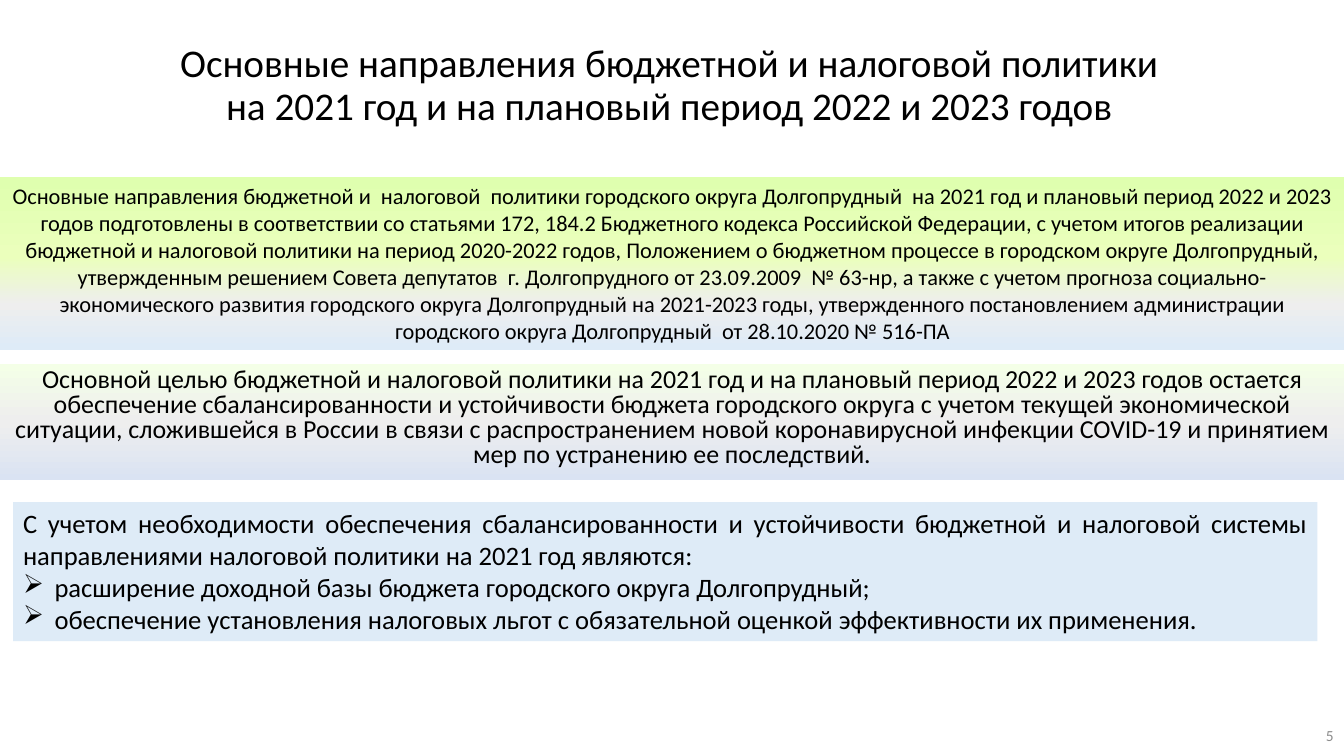
"""Build the slide on budget and tax policy directions for 2021-2023."""
from lxml.etree import SubElement
from pptx import Presentation
from pptx.dml.color import RGBColor
from pptx.enum.shapes import MSO_SHAPE
from pptx.enum.text import MSO_ANCHOR, MSO_AUTO_SIZE, PP_ALIGN
from pptx.oxml.ns import qn
from pptx.util import Pt


def paint(fill, *stops):
    """Fill with one hex colour, or top to bottom with (percent, hex) stops."""
    if len(stops) == 1:
        fill.solid()
        fill.fore_color.rgb = RGBColor.from_string(stops[0])
        return
    fill.gradient()
    fill.gradient_angle = 270
    stop_list = fill._fill._gradFill.find(qn("a:gsLst"))
    stop_list.clear()
    for percent, colour in stops:
        stop = SubElement(stop_list, qn("a:gs"), pos=str(percent * 1000))
        SubElement(stop, qn("a:srgbClr"), val=colour)


def write(part, box, text, size, colour="000000", frame={}, paragraph={}):
    """Place a part, write its text and apply the format values."""
    part.left, part.top, part.width, part.height = map(Pt, box)
    text_frame = part.text_frame
    text_frame.text = text
    for key, value in {"word_wrap": True, "auto_size": MSO_AUTO_SIZE.NONE, **frame}.items():
        setattr(text_frame, key, value)
    for line in text_frame.paragraphs:
        for key, value in {"alignment": PP_ALIGN.CENTER, **paragraph}.items():
            setattr(line, key, value)
        for run in line.runs:
            run.font.name, run.font.size = "Calibri", Pt(size)
            paint(run.font.fill, colour)


presentation = Presentation()
presentation.slide_width, presentation.slide_height = Pt(960), Pt(540)
slide = presentation.slides.add_slide(presentation.slide_layouts[1])
headline, goal = slide.placeholders

write(
    headline, (67, 9.4, 828, 104.4),
    "Основные направления бюджетной и налоговой политики \v"
    "на 2021 год и на плановый период 2022 и 2023 годов ",
    28, frame={"vertical_anchor": MSO_ANCHOR.MIDDLE}, paragraph={"line_spacing": 0.9},
)

legal_basis = slide.shapes.add_shape(MSO_SHAPE.RECTANGLE, 0, 0, 0, 0)
paint(legal_basis.fill, (0, "DFFFAF"), (46, "EBFFBC"), (74, "EEEEEE"), (99, "DEEBF7"))
write(
    legal_basis, (0, 126.7, 961, 123.1),
    "Основные направления бюджетной и  налоговой  политики городского округа "
    "Долгопрудный  на 2021 год и плановый период 2022 и 2023 годов подготовлены "
    "в соответствии со статьями 172, 184.2 Бюджетного кодекса Российской Федерации, "
    "с учетом итогов реализации бюджетной и налоговой политики на период "
    "2020-2022 годов, Положением о бюджетном процессе в городском округе "
    "Долгопрудный, утвержденным решением Совета депутатов  г. Долгопрудного "
    "от 23.09.2009  № 63-нр, а также с учетом прогноза социально-экономического "
    "развития городского округа Долгопрудный на 2021-2023 годы, утвержденного "
    "постановлением администрации городского округа Долгопрудный  "
    "от 28.10.2020 № 516-ПА",
    16, frame={"vertical_anchor": MSO_ANCHOR.TOP},
)

paint(goal.fill, (0, "F4FFE7"), (50, "EEEEEE"), (100, "DAE3F3"))
write(
    goal, (0, 260, 960, 82.8),
    "Основной целью бюджетной и налоговой политики на 2021 год и на плановый период "
    "2022 и 2023 годов остается обеспечение сбалансированности и устойчивости бюджета "
    "городского округа с учетом текущей экономической ситуации, сложившейся в России "
    "в связи с распространением новой коронавирусной инфекции COVID-19 и принятием "
    "мер по устранению ее последствий.",
    18.5, frame={"vertical_anchor": MSO_ANCHOR.TOP},
    paragraph={"line_spacing": 0.8, "space_before": Pt(10)},
)
goal_format = goal.text_frame.paragraphs[0]._p.get_or_add_pPr()
goal_format.set("marL", "0")
goal_format.set("indent", "0")
SubElement(goal_format, qn("a:buNone"))

tax_directions = slide.shapes.add_shape(MSO_SHAPE.RECTANGLE, 0, 0, 0, 0)
paint(tax_directions.fill, "DEEBF7")
write(
    tax_directions, (9.4, 358.6, 931.7, 99.4),
    "С учетом необходимости обеспечения сбалансированности и устойчивости бюджетной "
    "и налоговой системы направлениями налоговой политики на 2021 год являются:\n"
    "расширение доходной базы бюджета городского округа Долгопрудный;\n"
    "обеспечение установления налоговых льгот с обязательной оценкой эффективности "
    "их применения.",
    19, frame={"vertical_anchor": MSO_ANCHOR.TOP}, paragraph={"alignment": PP_ALIGN.JUSTIFY},
)
for direction in tax_directions.text_frame.paragraphs[1:]:
    direction_format = direction._p.get_or_add_pPr()
    direction_format.set("marL", str(Pt(22.5)))
    direction_format.set("indent", str(-Pt(22.5)))
    SubElement(direction_format, qn("a:buChar"), char="➢")

for panel in (legal_basis, tax_directions):
    panel.shadow.inherit = False
    panel.line.fill.background()

page_number = slide.shapes.add_textbox(0, 0, 0, 0)
write(
    page_number, (743.8, 511.2, 216, 28.8), "5", 11, "8C8C8C",
    frame={"vertical_anchor": MSO_ANCHOR.MIDDLE}, paragraph={"alignment": PP_ALIGN.RIGHT},
)

presentation.save("out.pptx")
